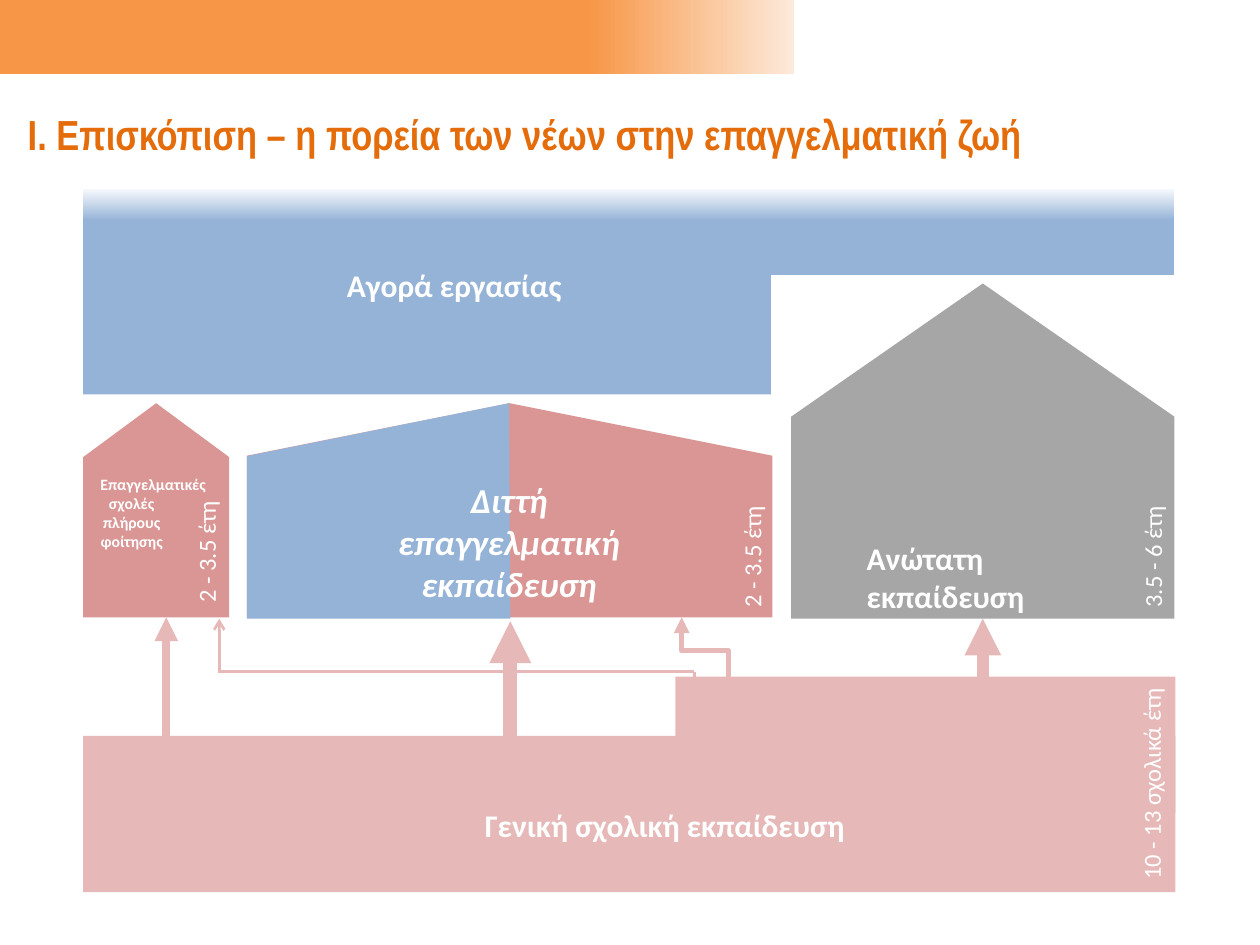
from lxml.etree import SubElement
from pptx import Presentation
from pptx.dml.color import RGBColor
from pptx.enum.shapes import MSO_CONNECTOR, MSO_SHAPE
from pptx.enum.text import MSO_ANCHOR, MSO_AUTO_SIZE, PP_ALIGN
from pptx.oxml.ns import qn
from pptx.util import Inches, Pt

THEME = {
    "orange": "F79646", "cream": "FDEADA", "title": "E46C0A", "white": "FFFFFF",
    "blue": "95B3D7", "pale_blue": "F6F9FC", "rose": "D99694",
    "light_rose": "E6B9B8", "grey": "A6A6A6",
    "title_font": "Arial Narrow", "body_font": "Calibri",
    "title_size": 24, "emphasis_size": 20, "heading_size": 18,
    "duration_size": 14, "small_size": 9,
}

# Content; every box is left, top, width, height as seen on the slide
TITLE = "I. Επισκόπιση – η πορεία των νέων στην επαγγελματική ζωή"
BLOCKS = [
    ((5.36, 5.37, 3.97, 1.08), "light_rose"),
    ((0.66, 5.84, 8.67, 1.24), "light_rose"),
    ((0.66, 2.06, 5.46, 1.07), "blue"),
]
GRADIENTS = [  # box, (position, colour) stops, angle
    ((0, 0, 6.3, 0.59), [(0.74, "orange"), (1, "cream")], 0),
    ((0.66, 1.5, 8.66, 0.68), [(0, "pale_blue"), (0.37, "blue")], 270),
]
HOUSES = [  # box, roof height as a share of the shorter side, colour
    ((0.66, 3.2, 1.16, 1.7), 0.369, "rose"),
    ((6.28, 2.25, 3.04, 2.66), 0.397, "grey"),
    ((1.96, 3.2, 4.17, 1.7), 0.245, "rose"),
]
DUAL_BLUE_HALF = [(1.96, 4.91), (1.96, 3.62), (4.04, 3.2), (4.05, 4.91)]
LABELS = [
    ((6.78, 4.23, 2.09, 0.71), ["Ανώτατη εκπαίδευση"], {}),
    ((1.62, 2.06, 3.97, 0.4), ["Αγορά εργασίας"], {"align": PP_ALIGN.CENTER}),
    ((3.75, 6.35, 3.13, 0.4), ["Γενική σχολική εκπαίδευση"], {}),
    ((2.92, 3.75, 2.24, 1.11), ["Διττή επαγγελματική εκπαίδευση"],
     {"align": PP_ALIGN.CENTER, "size": "emphasis_size", "italic": True}),
    ((0.31, 3.65, 1.47, 0.79), ["Επαγγελματικές", "σχολές", "πλήρους", "φοίτησης"],
     {"align": PP_ALIGN.CENTER, "size": "small_size", "top_inset": 0.12,
      "first_margin": 0.34}),
]
DURATIONS = [
    ((8.97, 5.24, 0.34, 1.84), "10 - 13 σχολικά έτη"),
    ((8.98, 3.58, 0.34, 1.34), "3.5 - 6 έτη"),
    ((5.8, 3.58, 0.34, 1.34), "2 - 3.5 έτη"),
    ((1.47, 3.18, 0.34, 1.7), "2 - 3.5 έτη"),
]
LINES = [  # start, end, width, arrowhead
    ((7.8, 5.57), (7.8, 4.91), 7, "triangle"),
    ((4.05, 6), (4.05, 4.93), 8, "triangle"),
    ((1.32, 5.84), (1.32, 4.9), 4.5, "triangle"),
    ((1.74, 5.33), (1.74, 4.91), 1.5, "arrow"),
    ((1.73, 5.33), (5.51, 5.33), 1.5, None),
    ((5.51, 5.42), (5.51, 5.33), 1.5, None),
]
ELBOW_START, ELBOW_END = (5.78, 5.43), (5.41, 4.9)


def color(name):
    return RGBColor.from_string(THEME[name])


def inches(values):
    return [Inches(value) for value in values]


def turned_frame(box):
    """Frame that covers the box once it is rotated by a quarter turn."""
    left, top, width, height = box
    shift = (width - height) / 2
    return left + shift, top - shift, height, width


def add_block(slide, box, fill=None, kind=MSO_SHAPE.RECTANGLE):
    shape = slide.shapes.add_shape(kind, *inches(box))
    shape.shadow.inherit = False
    shape.line.fill.background()
    if fill:
        shape.fill.solid()
        shape.fill.fore_color.rgb = color(fill)
    return shape


def add_gradient(slide, box, stops, angle):
    fill = add_block(slide, box).fill
    fill.gradient()
    fill.gradient_angle = angle
    for stop, (position, name) in zip(fill.gradient_stops, stops):
        stop.position = position
        stop.color.rgb = color(name)


def add_house(slide, box, roof, fill):
    house = add_block(slide, turned_frame(box), fill, MSO_SHAPE.RIGHT_ARROW)
    house.rotation = 270
    house.adjustments[0] = 1
    house.adjustments[1] = roof


def write_text(shape, texts, size="heading_size", font="body_font", fill="white",
               bold=True, italic=False, align=PP_ALIGN.LEFT, top_inset=0.05,
               first_margin=0, first_indent=0, fit=MSO_AUTO_SIZE.SHAPE_TO_FIT_TEXT):
    frame = shape.text_frame
    frame.word_wrap = True
    frame.auto_size = fit
    frame.margin_top = Inches(top_inset)
    for index, text in enumerate(texts):
        paragraph = frame.add_paragraph() if index else frame.paragraphs[0]
        paragraph.alignment = align
        if index == 0 and first_margin:
            properties = paragraph._p.get_or_add_pPr()
            properties.set("marL", str(Inches(first_margin)))
            properties.set("indent", str(Inches(first_indent)))
        run = paragraph.add_run()
        run.text = text
        run.font.name = THEME[font]
        run.font.size = Pt(THEME[size])
        run.font.bold = bold
        run.font.italic = italic
        run.font.color.rgb = color(fill)


def add_line(slide, start, end, width, head, kind=MSO_CONNECTOR.STRAIGHT):
    connector = slide.shapes.add_connector(kind, *inches(start + end))
    connector.line.color.rgb = color("light_rose")
    connector.line.width = Pt(width)
    properties = connector._element.spPr
    if head:
        SubElement(properties.find(qn("a:ln")), qn("a:tailEnd"), type=head)
    SubElement(properties, qn("a:effectLst"))
    return connector


def add_upright_elbow(slide, start, end, width, head):
    """Elbow that leaves and arrives vertically: a level one, turned."""
    box = (end[0], end[1], start[0] - end[0], start[1] - end[1])
    left, top, wide, high = turned_frame(box)
    elbow = add_line(slide, (left, top + high), (left + wide, top), width, head,
                     MSO_CONNECTOR.ELBOW)
    elbow._element.spPr.find(qn("a:xfrm")).set("rot", str(270 * 60000))


def main():
    presentation = Presentation()
    presentation.slide_width, presentation.slide_height = Inches(10), Inches(7.5)
    slide = presentation.slides.add_slide(presentation.slide_layouts[5])

    # Title
    title = slide.shapes.title
    title.left, title.top, title.width, title.height = inches((0.12, 0.82, 9.53, 0.48))
    title.text_frame.vertical_anchor = MSO_ANCHOR.MIDDLE
    write_text(title, [TITLE], size="title_size", font="title_font", fill="title",
               first_margin=0.2, first_indent=-0.2, fit=MSO_AUTO_SIZE.NONE)

    # Banner, labour market and schools
    for box, fill in BLOCKS:
        add_block(slide, box, fill)
    for box, stops, angle in GRADIENTS:
        add_gradient(slide, box, stops, angle)
    for box, roof, fill in HOUSES:
        add_house(slide, box, roof, fill)

    # Blue half of dual training
    corners = [tuple(inches(point)) for point in DUAL_BLUE_HALF]
    builder = slide.shapes.build_freeform(*corners[0])
    builder.add_line_segments(corners[1:], close=True)
    half = builder.convert_to_shape()
    half.shadow.inherit = False
    half.fill.solid()
    half.fill.fore_color.rgb = color("blue")
    half.line.fill.background()

    # Labels and durations
    for box, texts, style in LABELS:
        write_text(slide.shapes.add_textbox(*inches(box)), texts, **style)
    for box, text in DURATIONS:
        label = slide.shapes.add_textbox(*inches(turned_frame(box)))
        label.rotation = 270
        write_text(label, [text], size="duration_size", bold=False)

    # Paths between the stages
    for start, end, width, head in LINES:
        add_line(slide, start, end, width, head)
    add_upright_elbow(slide, ELBOW_START, ELBOW_END, 3, "triangle")

    presentation.save("out.pptx")


if __name__ == "__main__":
    main()
